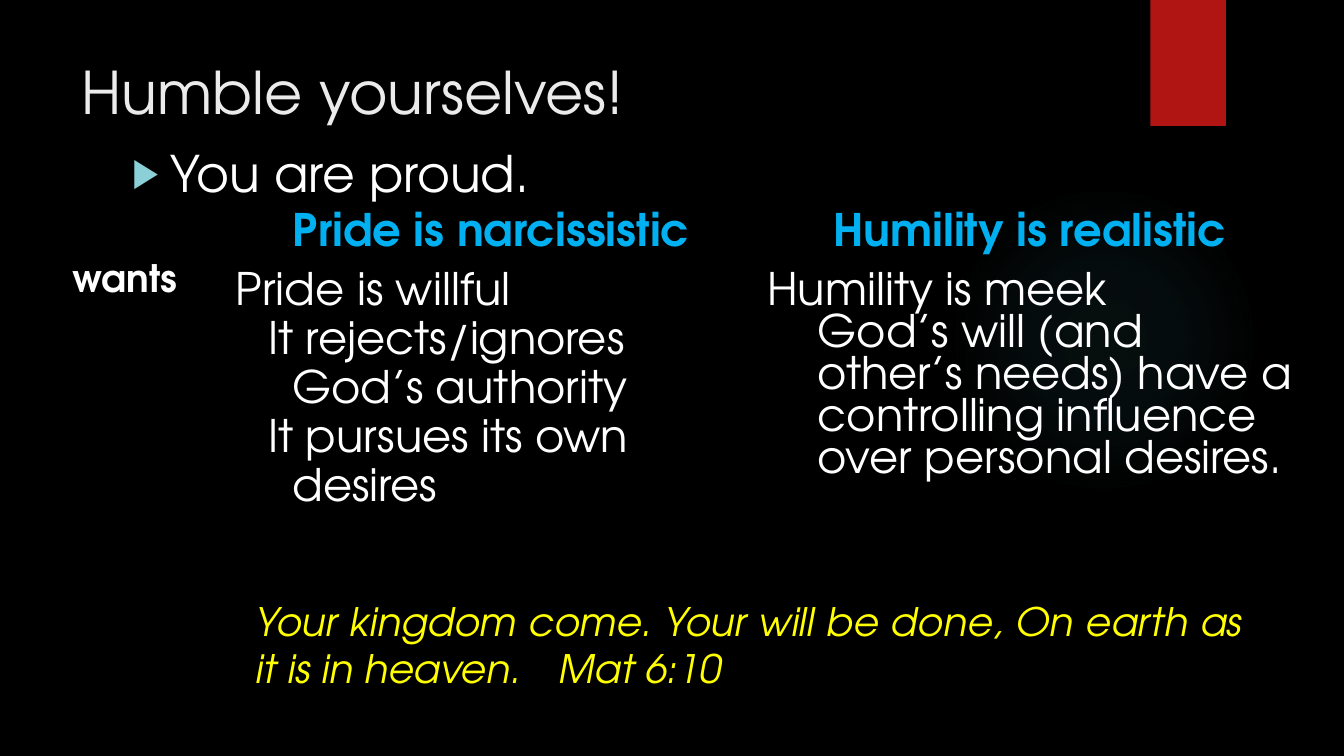
from dataclasses import dataclass

from lxml import etree
from pptx import Presentation
from pptx.dml.color import RGBColor
from pptx.enum import shapes, text
from pptx.oxml import ns, parse_xml
from pptx.util import Inches, Pt


@dataclass(frozen=True)
class Theme:
    font: str = "TeX Gyre Adventor"
    black: str = "000000"
    white: str = "FFFFFF"
    title: str = "EBEBEB"
    red: str = "B01513"
    blue: str = "00B0F0"
    yellow: str = "FFFF00"
    bullet: str = "8AD0D6"
    glow: str = "50B9C1"
    title_size: int = 42
    point_size: int = 36
    table_size: int = 32
    verse_size: int = 28
    label_size: int = 27


theme = Theme()
LEFT, CENTER = text.PP_ALIGN.LEFT, text.PP_ALIGN.CENTER


def write(para, words, size, color, bold=False, italic=False, align=LEFT,
          spacing=None, indent=(0, 0)):
    """Fill a paragraph; indent is the left margin and first-line offset in inches."""
    para.text = words
    para.alignment = align
    if spacing:
        para.line_spacing = spacing
    properties = para._p.get_or_add_pPr()
    properties.set("marL", str(Inches(indent[0])))
    properties.set("indent", str(Inches(indent[1])))
    for span in para.runs:
        span.font.name = theme.font
        span.font.size = Pt(size)
        span.font.bold = bold
        span.font.italic = italic
        span.font.color.rgb = RGBColor.from_string(color)


def place(box, left, top, width, height):
    box.left, box.top = Inches(left), Inches(top)
    box.width, box.height = Inches(width), Inches(height)
    frame = box.text_frame
    frame.word_wrap = True
    frame.auto_size = text.MSO_AUTO_SIZE.NONE
    frame.vertical_anchor = text.MSO_ANCHOR.TOP
    return frame.paragraphs[0]


deck = Presentation()
deck.slide_width, deck.slide_height = Inches(13.33), Inches(7.5)
page = deck.slides.add_slide(deck.slide_layouts[1])
page.background.fill.solid()
page.background.fill.fore_color.rgb = RGBColor.from_string(theme.black)
title, body = page.placeholders

# Backdrop: faint round glow and red bookmark, behind the text
glow = page.shapes.add_shape(shapes.MSO_SHAPE.OVAL, Inches(9.41), Inches(1.83),
                             Inches(3.08), Inches(3.08))
bookmark = page.shapes.add_shape(shapes.MSO_SHAPE.RECTANGLE, Inches(11.41), 0,
                                 Inches(0.75), Inches(1.25))
bookmark.fill.solid()
bookmark.fill.fore_color.rgb = RGBColor.from_string(theme.red)
for backdrop in (glow, bookmark):
    backdrop.shadow.inherit = False
    backdrop.line.fill.background()
    title._element.addprevious(backdrop._element)
stops = "".join(
    f'<a:gs pos="{position * 1000}"><a:srgbClr val="{theme.glow}">'
    f'<a:alpha val="{alpha * 1000}"/></a:srgbClr></a:gs>'
    for position, alpha in ((0, 7), (36, 6), (69, 0), (100, 0)))
glow._element.spPr.find(ns.qn("a:prstGeom")).addnext(parse_xml(
    f'<a:gradFill {ns.nsdecls("a")}><a:gsLst>{stops}</a:gsLst><a:path path="circle">'
    '<a:fillToRect l="50000" t="50000" r="50000" b="50000"/></a:path></a:gradFill>'))

# Title and main point
write(place(title, 0.71, 0.5, 10.29, 0.91), "Humble yourselves!",
      theme.title_size, theme.title)
point = place(body, 1.21, 1.3, 11.21, 5.79)
properties = point._p.get_or_add_pPr()
bullet_color = etree.SubElement(properties, ns.qn("a:buClr"))
etree.SubElement(bullet_color, ns.qn("a:srgbClr"), val=theme.bullet)
etree.SubElement(properties, ns.qn("a:buSzPct"), val="80000")
etree.SubElement(properties, ns.qn("a:buChar"), char="▶")
write(point, "You are proud.", theme.point_size, theme.white,
      spacing=1.1, indent=(0.38, -0.38))
point.space_before = Pt(0)

# Comparison table, without style or grid
table = page.shapes.add_table(2, 3, Inches(0.24), Inches(1.99),
                              Inches(12.68), Inches(4.01)).table
table._tbl.tblPr.find(ns.qn("a:tableStyleId")).text = "{2D5ABB26-0587-4C30-8999-92F81FD0307C}"
for column, width in zip(table.columns, (2, 5.27, 5.41)):
    column.width = Inches(width)
for row, height in zip(table.rows, (0.58, 3.43)):
    row.height = Inches(height)
for cell in table.iter_cells():
    cell.fill.background()

for column, heading in enumerate(("Pride is narcissistic", "Humility is realistic"), 1):
    write(table.cell(0, column).text_frame.paragraphs[0], heading, theme.table_size,
          theme.blue, bold=True, align=CENTER, spacing=Pt(35))
write(table.cell(1, 0).text_frame.paragraphs[0], "wants", theme.label_size,
      theme.white, bold=True, align=CENTER)

hanging = (0.56, -0.24)
contrasts = (
    (("Pride is willful", 35, (0, 0)),
     ("It rejects/ignores God’s authority", 35, hanging),
     ("It pursues its own desires", 35, hanging)),
    (("Humility is meek", 35, (0, 0)),
     ("God’s will (and other’s needs) have a controlling influence "
      "over personal desires.", 30, (0.5, 0))),
)
for column, lines in enumerate(contrasts, 1):
    frame = table.cell(1, column).text_frame
    for number, (words, spacing, indent) in enumerate(lines):
        para = frame.add_paragraph() if number else frame.paragraphs[0]
        write(para, words, theme.table_size, theme.white,
              spacing=Pt(spacing), indent=indent)

# Verse, with its reference at a tab stop
verse_box = page.shapes.add_textbox(0, 0, 0, 0)
verse = place(verse_box, 2.32, 5.88, 10.1, 1.04)
tabs = etree.SubElement(verse._p.get_or_add_pPr(), ns.qn("a:tabLst"))
etree.SubElement(tabs, ns.qn("a:tab"), pos=str(Inches(7.26)), algn="l")
write(verse, "Your kingdom come. Your will be done, On earth as it is in heaven.\tMat 6:10",
      theme.verse_size, theme.yellow, italic=True,
      align=text.PP_ALIGN.JUSTIFY, indent=(0.12, 0))

deck.save("out.pptx")
